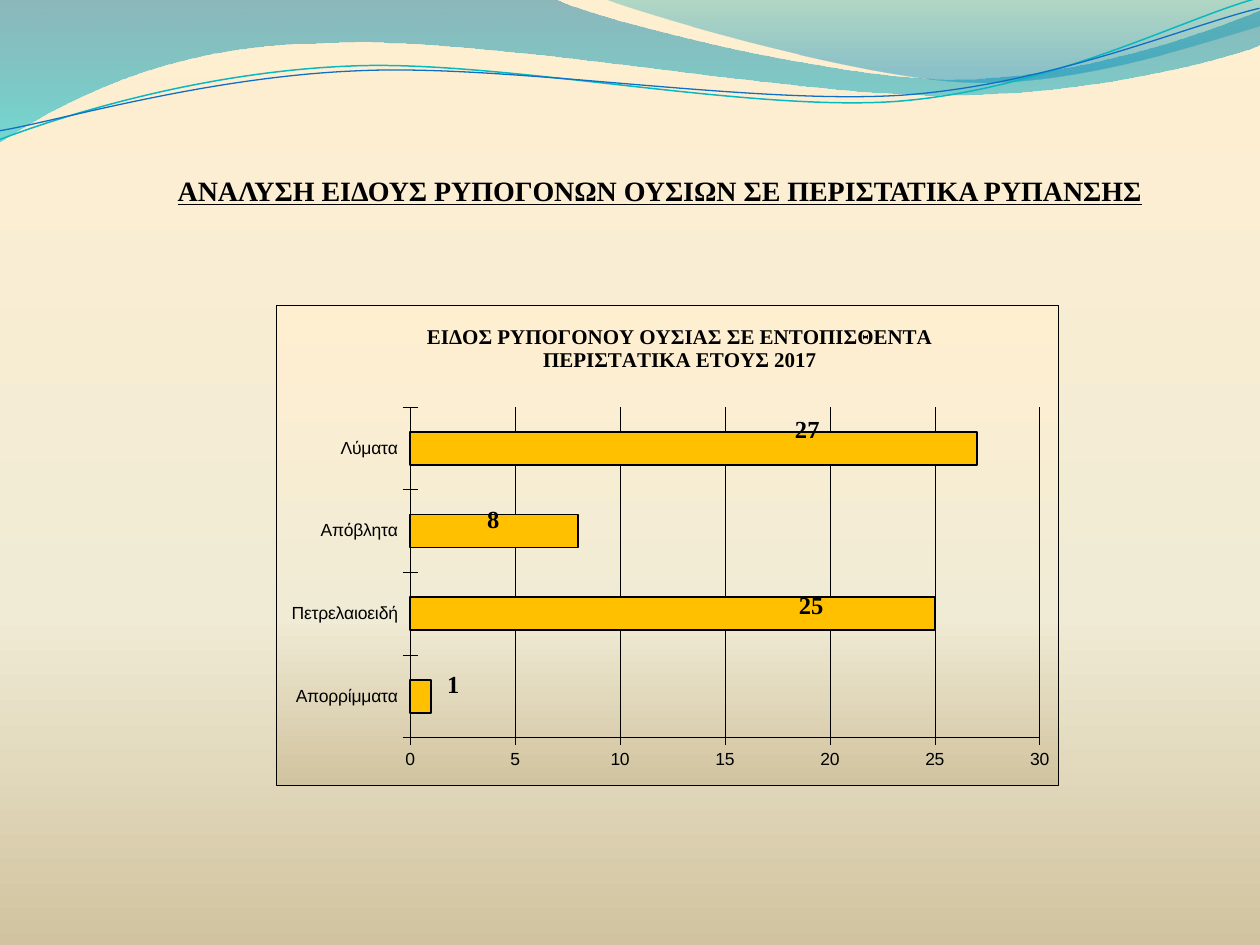
"""Build a slide with a wave header and a bar chart of pollutant types."""
from itertools import chain

from pptx import Presentation
from pptx.chart.data import CategoryChartData
from pptx.dml.color import RGBColor
from pptx.enum.chart import XL_CHART_TYPE as ChartType, XL_LABEL_POSITION as LabelPosition
from pptx.enum.chart import XL_TICK_LABEL_POSITION as TickLabels
from pptx.enum.text import MSO_ANCHOR as Anchor, MSO_AUTO_SIZE as AutoSize, PP_ALIGN as Align
from pptx.oxml import parse_xml
from pptx.oxml.ns import nsdecls, qn
from pptx.util import Pt

PX = 914400 / 126
CHART_WIDTH, CHART_HEIGHT = 782, 481
COLORS = {"black": "000000", "bar": "FFC000", "cream": "FFEFD1", "ivory": "F0EBD5",
          "sand": "D1C39F", "teal_line": "0AB8BF", "blue_line": "0F6FC6",
          "deep_blue": "0074A1", "aqua": "00C6CF", "teal": "00A1A9", "sea_blue": "008BBF"}
RGB = {name: RGBColor.from_string(value) for name, value in COLORS.items()}
PAPER = [(0, "cream", 100), (65, "ivory", 100), (100, "sand", 100)]
SERIF = "Times New Roman"


def paint_gradient(element, stops):
    """Swap the first empty fill for a downward gradient."""
    marks = "".join(
        f'<a:gs pos="{place * 1000}"><a:srgbClr val="{COLORS[color]}">'
        f'<a:alpha val="{alpha * 1000}"/></a:srgbClr></a:gs>'
        for place, color, alpha in stops)
    gradient = parse_xml(f'<a:gradFill {nsdecls("a")} rotWithShape="1"><a:gsLst>{marks}</a:gsLst>'
                         '<a:lin ang="5400000" scaled="0"/></a:gradFill>')
    empty = next(element.iter(qn("a:noFill")))
    empty.getparent().replace(empty, gradient)


def place_in_chart(element, index, modes, **lengths):
    """Give a chart part a manual layout, with lengths in px."""
    for old in element.findall(qn("c:layout")):
        element.remove(old)
    shares = {name: length / (CHART_WIDTH if name in "xw" else CHART_HEIGHT)
              for name, length in lengths.items()}
    values = "".join(f'<c:{name} val="{value}"/>' for name, value in {**modes, **shares}.items())
    element.insert(index, parse_xml(f'<c:layout {nsdecls("c")}><c:manualLayout>{values}'
                                    '</c:manualLayout></c:layout>'))


deck = Presentation()
deck.slide_width, deck.slide_height = round(1260 * PX), round(945 * PX)
slide = deck.slides.add_slide(deck.slide_layouts[5])
slide.background.fill.background()
paint_gradient(slide.element, PAPER)

waves = [
    ([(-1, -1), (554, -1), (600, 21, 837, 79, 955, 79), (1074, 79, 1207, 33, 1260, 11),
      (1261, 45), (1239, 55, 1096, 96, 940, 95), (784, 95, 481, 35, 324, 43),
      (163, 44, 58, 105, -1, 142)], [(0, "deep_blue", 45), (100, "aqua", 55)], None),
    ([(604, -1), (641, 14, 859, 78, 969, 82), (1079, 86, 1211, 40, 1260, 26), (1260, 0)],
     [(0, "teal", 30), (80, "sea_blue", 45)], None),
    ([(-3, 110), (58, 90, 199, 52, 350, 53), (499, 53, 745, 118, 896, 114),
      (1049, 109, 1184, 45, 1260, 28)], None, ("teal_line", 0.85)),
    ([(-2, 101), (57, 94, 207, 57, 358, 58), (509, 58, 750, 111, 902, 108),
      (1052, 104, 1188, 52, 1262, 38)], None, ("blue_line", 0.75)),
]
for segments, stops, line in waves:
    numbers = list(chain.from_iterable(segments))
    points = list(zip(numbers[::2], numbers[1::2]))
    builder = slide.shapes.build_freeform(*points[0], scale=PX)
    builder.add_line_segments(points[1:], close=stops is not None)
    wave = builder.convert_to_shape()
    steps = iter(list(wave.element.iter(qn("a:lnTo"))))
    for segment in segments[1:]:
        step = next(steps)
        if len(segment) == 6:
            curve = parse_xml(f'<a:cubicBezTo {nsdecls("a")}/>')
            step.addprevious(curve)
            for part in (step, next(steps), next(steps)):
                curve.append(part[0])
                part.getparent().remove(part)
    wave.shadow.inherit = False
    wave.fill.background()
    if stops:
        paint_gradient(wave.element, stops)
        wave.line.fill.background()
    else:
        wave.rotation = 357.3
        wave.line.color.rgb = RGB[line[0]]
        wave.line.width = Pt(line[1])

title = slide.shapes.title
title.element.getparent().append(title.element)
title.left, title.top, title.width, title.height = (round(v * PX) for v in (144, 97, 1032, 110))
frame = title.text_frame
frame.text = "ΑΝΑΛΥΣΗ ΕΙΔΟΥΣ ΡΥΠΟΓΟΝΩΝ ΟΥΣΙΩΝ ΣΕ ΠΕΡΙΣΤΑΤΙΚΑ ΡΥΠΑΝΣΗΣ"
frame.auto_size = AutoSize.NONE
frame.word_wrap = True
frame.vertical_anchor = Anchor.BOTTOM
frame.margin_left = frame.margin_right = frame.margin_bottom = 0
para = frame.paragraphs[0]
para.alignment = Align.CENTER
para.font.name, para.font.size = SERIF, Pt(16)
para.font.bold = para.font.underline = True
para.font.color.rgb = RGB["black"]

data = CategoryChartData()
data.categories = ["Απορρίμματα", "Πετρελαιοειδή", "Απόβλητα", "Λύματα"]
data.add_series("Series 1", (1, 25, 8, 27))
box = [round(v * PX) for v in (276, 305, CHART_WIDTH, CHART_HEIGHT)]
chart = slide.shapes.add_chart(ChartType.BAR_CLUSTERED, *box, data).chart
chart.has_legend = False
chart.font.name, chart.font.size = "Arial", Pt(10)
chart.font.color.rgb = RGB["black"]
chart_area = parse_xml(
    f'<c:spPr {nsdecls("c", "a")}><a:noFill/><a:ln w="3175"><a:solidFill>'
    f'<a:srgbClr val="{COLORS["black"]}"/></a:solidFill></a:ln></c:spPr>')
paint_gradient(chart_area, PAPER)
body = chart.element.find(qn("c:chart"))
body.addnext(chart_area)
edges = {"xMode": "edge", "yMode": "edge"}
place_in_chart(body.find(qn("c:plotArea")), 0, {"layoutTarget": "inner", **edges},
               x=134, y=102, w=630, h=331)

heading = chart.chart_title.text_frame
heading.text = "ΕΙΔΟΣ ΡΥΠΟΓΟΝΟΥ ΟΥΣΙΑΣ ΣΕ ΕΝΤΟΠΙΣΘΕΝΤΑ ΠΕΡΙΣΤΑΤΙΚΑ ΕΤΟΥΣ 2017"
heading_font = heading.paragraphs[0].font
heading_font.name, heading_font.size, heading_font.bold = SERIF, Pt(12), True
heading_font.color.rgb = RGB["black"]
place_in_chart(body.find(qn("c:title")), 1, edges, x=147, y=15)

value_axis, category_axis = chart.value_axis, chart.category_axis
value_axis.minimum_scale, value_axis.maximum_scale, value_axis.major_unit = 0, 30, 5
value_axis.has_major_gridlines = True
category_axis.tick_label_position = TickLabels.LOW
for tick in list(chart.element.iter(qn("c:majorTickMark"))):
    tick.getparent().remove(tick)
for line in (value_axis.format.line, category_axis.format.line,
             value_axis.major_gridlines.format.line):
    line.color.rgb = RGB["black"]
    line.width = Pt(0.25)

plot = chart.plots[0]
plot.gap_width = 150
plot.vary_by_categories = False
series = plot.series[0]
series.invert_if_negative = False
series.format.fill.solid()
series.format.fill.fore_color.rgb = RGB["bar"]
series.format.line.color.rgb = RGB["black"]
series.format.line.width = Pt(1)
series.data_labels.show_value = True
label_shifts = [(11, -11), (-141, -8), (-96, -11), (-187, -18)]
labels = [series.points[index].data_label for index in range(len(label_shifts))]
for label in labels:
    label.position = LabelPosition.OUTSIDE_END
for label in [series.data_labels, *labels]:
    label.font.name, label.font.size, label.font.bold = SERIF, Pt(14), True
    label.font.color.rgb = RGB["black"]
for element, (across, down) in zip(chart.element.iter(qn("c:dLbl")), label_shifts):
    place_in_chart(element, 1, {}, x=across, y=down)
for leader in chart.element.iter(qn("c:showLeaderLines")):
    leader.set("val", "0")
next(chart.element.iter(qn("c:dLbls"))).append(parse_xml(
    f'<c:extLst {nsdecls("c")}><c:ext uri="{{CE6537A1-D6FC-4f65-9D91-7224C49458BB}}" '
    'xmlns:c15="http://schemas.microsoft.com/office/drawing/2012/chart">'
    '<c15:showLeaderLines val="0"/></c:ext></c:extLst>'))

deck.save("out.pptx")
